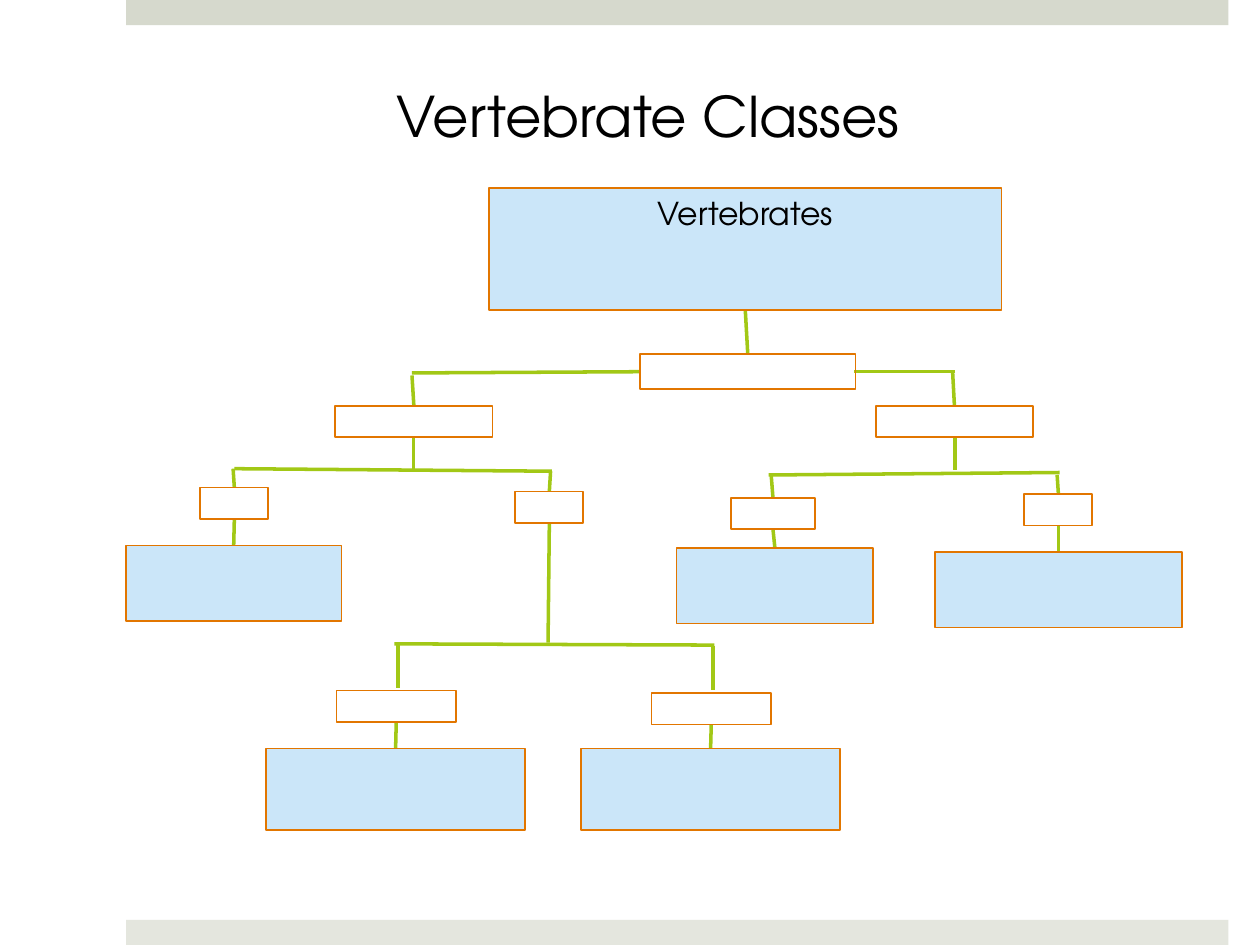
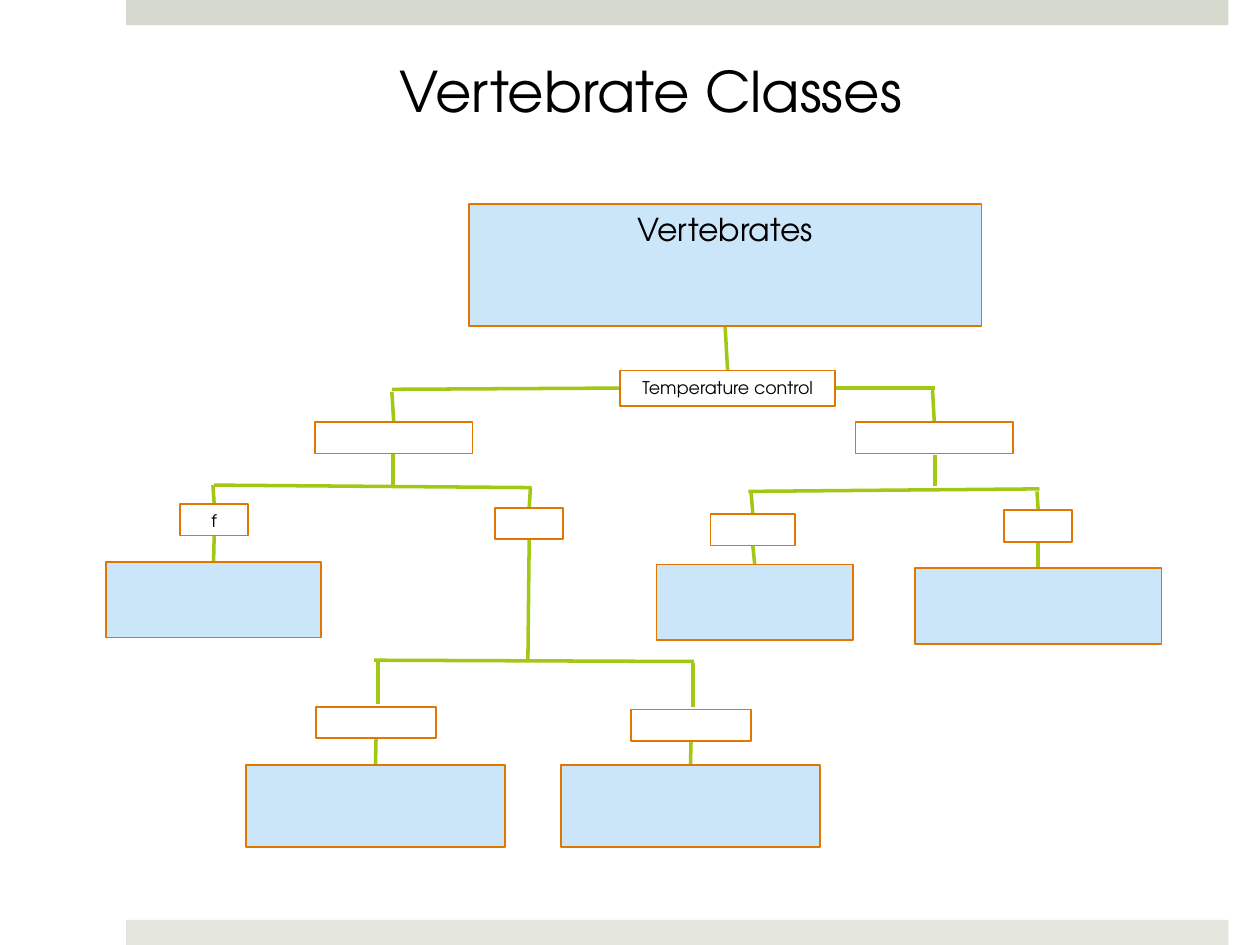
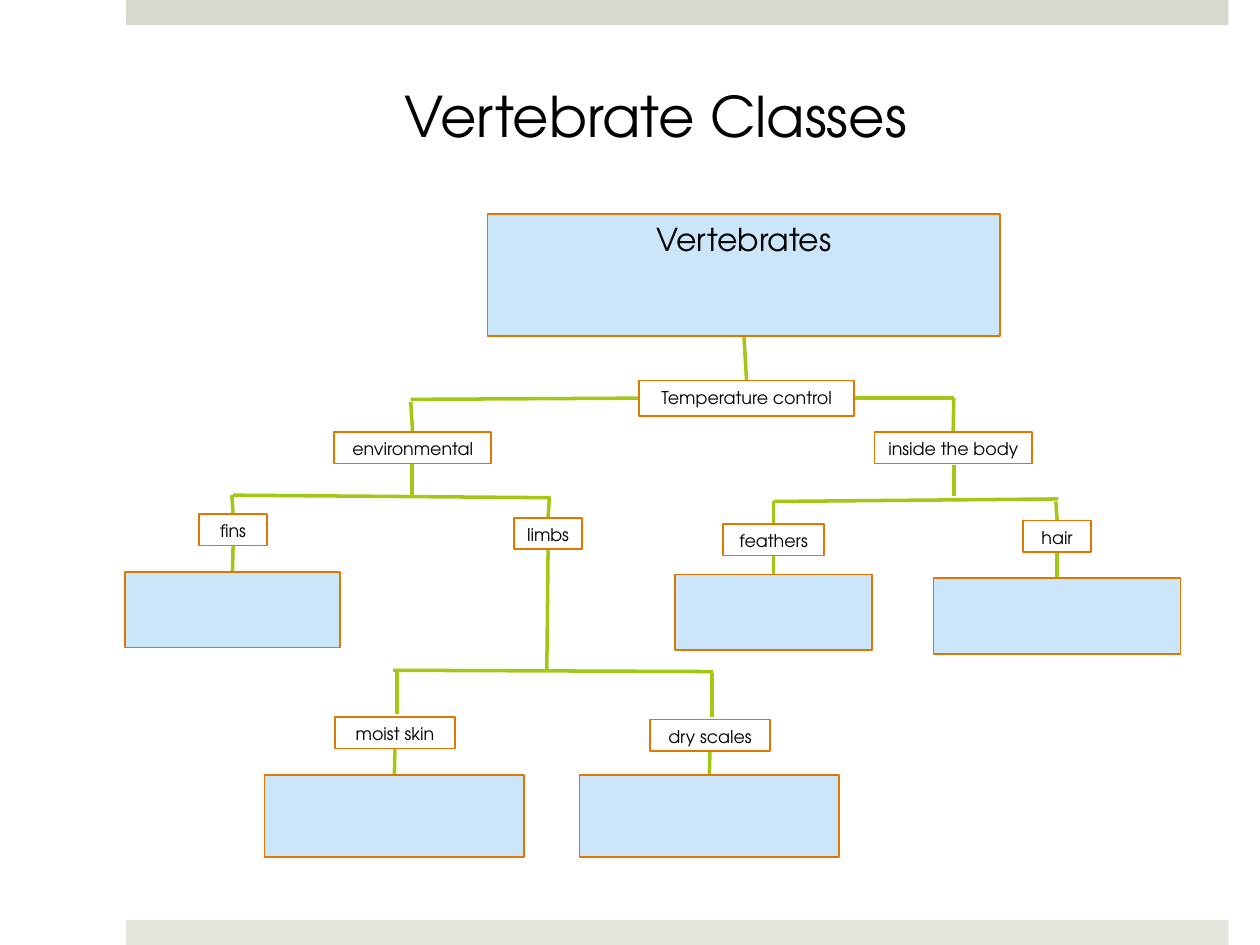
from lxml import etree
from pptx import Presentation
from pptx.dml.color import RGBColor
from pptx.enum.shapes import MSO_CONNECTOR, MSO_SHAPE
from pptx.enum.text import MSO_ANCHOR, MSO_AUTO_SIZE, PP_ALIGN
from pptx.oxml.ns import qn
from pptx.util import Inches, Pt

RECTANGLE = MSO_SHAPE.RECTANGLE
STRAIGHT = MSO_CONNECTOR.STRAIGHT
TOP = MSO_ANCHOR.TOP
FIT_SHAPE = MSO_AUTO_SIZE.SHAPE_TO_FIT_TEXT
CENTER = PP_ALIGN.CENTER
LEFT = PP_ALIGN.LEFT

FONT = "TeX Gyre Adventor"
COLORS = {
    "text": "000000",
    "top band": "D6D9CD",
    "bottom band": "E4E6DE",
    "group": "CBE6F9",
    "outline": "E27600",
    "branch": "A2C816",
}

GROUPS = {
    "vertebrates": (3.88, 1.49, 4.07, 0.97),
    "fish": (1, 4.33, 1.71, 0.6),
    "amphibians": (2.11, 5.94, 2.06, 0.65),
    "reptiles": (4.61, 5.94, 2.06, 0.65),
    "birds": (5.37, 4.35, 1.56, 0.6),
    "mammals": (7.42, 4.38, 1.96, 0.6),
}
TRAITS = {
    "control": (5.08, 2.81, 1.71, 0.28),
    "environmental": (2.66, 3.22, 1.25, 0.25),
    "inside": (6.95, 3.22, 1.25, 0.25),
    "fins": (1.59, 3.87, 0.54, 0.25),
    "limbs": (4.09, 3.9, 0.54, 0.25),
    "feathers": (5.8, 3.95, 0.67, 0.25),
    "hair": (8.13, 3.92, 0.54, 0.25),
    "moist": (2.67, 5.48, 0.95, 0.25),
    "scales": (5.17, 5.5, 0.95, 0.25),
}
LINKS = [
    ("vertebrates", "control"),
    ("fins", "fish"),
    ("moist", "amphibians"),
    ("scales", "reptiles"),
    ("feathers", "birds"),
    ("hair", "mammals"),
]
DROPS = {
    "environmental": (3.27, 2.98),
    "inside": (7.56, 2.94),
    "fins": (1.85, 3.72),
    "limbs": (4.37, 3.74),
    "feathers": (6.12, 3.76),
    "hair": (8.39, 3.77),
}
BRANCHES = {
    "control left": (5.08, 2.95, 3.27, 2.96),
    "control right": (7.58, 2.95, 6.78, 2.95),
    "environmental stem": (3.28, 3.47, 3.28, 3.72),
    "environmental bar": (4.38, 3.74, 1.86, 3.72),
    "inside stem": (7.58, 3.48, 7.58, 3.73),
    "inside bar": (8.41, 3.75, 6.1, 3.77),
    "limbs stem": (4.36, 4.15, 4.35, 5.1),
    "limbs bar": (5.67, 5.12, 3.13, 5.11),
    "moist drop": (3.16, 5.11, 3.16, 5.46),
    "scales drop": (5.66, 5.13, 5.66, 5.48),
}

WIDE_TRAITS = TRAITS | {"feathers": (5.75, 3.95, 0.8, 0.25)}
WIDE_DROPS = DROPS | {"feathers": (6.15, 3.77), "inside": (7.58, 2.95)}
WIDE_BRANCHES = BRANCHES | {"inside bar": (8.41, 3.75, 6.15, 3.77)}

TREE = (TRAITS, DROPS, BRANCHES)
WIDE_TREE = (WIDE_TRAITS, WIDE_DROPS, WIDE_BRANCHES)

ALL_TRAIT_NAMES = {
    "control": "Temperature control",
    "environmental": "environmental",
    "inside": "inside the body",
    "fins": "fins",
    "limbs": "limbs",
    "feathers": "feathers",
    "hair": "hair",
    "moist": "moist skin",
    "scales": "dry scales",
}
SLIDES = [
    ((3.05, 0.6), (0, 0), TREE, {}),
    ((3.07, 0.4), (-0.16, 0.13), TREE,
     {"control": "Temperature control", "fins": "f"}),
    ((3.11, 0.6), (-0.01, 0.21), WIDE_TREE, ALL_TRAIT_NAMES),
]


def color(name):
    return RGBColor.from_string(COLORS[name])


class Deck:
    def __init__(self):
        self.prs = Presentation()
        self.prs.slide_width = Inches(10)
        self.prs.slide_height = Inches(7.5)
        self.slide = None
        self.dx = self.dy = 0

    def new_slide(self):
        self.slide = self.prs.slides.add_slide(self.prs.slide_layouts[6])
        self.dx = self.dy = 0
        self.box((1, 0, 8.75, 0.2), fill="top band")
        self.box((1, 7.3, 8.75, 0.2), fill="bottom band")

    def shift(self, dx, dy):
        self.dx, self.dy = dx, dy

    def label(self, frame, text, size, align):
        frame.word_wrap = False
        frame.vertical_anchor = TOP
        paragraph = frame.paragraphs[0]
        paragraph.text = text
        paragraph.alignment = align
        paragraph.font.name = FONT
        paragraph.font.size = Pt(size)
        paragraph.font.color.rgb = color("text")

    def box(self, area, fill=None, line=None, text="", size=10):
        left, top, width, height = area
        shape = self.slide.shapes.add_shape(
            RECTANGLE, Inches(left + self.dx), Inches(top + self.dy),
            Inches(width), Inches(height))
        shape.shadow.inherit = False
        if fill:
            shape.fill.solid()
            shape.fill.fore_color.rgb = color(fill)
        else:
            shape.fill.background()
        if line:
            shape.line.color.rgb = color(line)
            shape.line.width = Pt(1)
        else:
            shape.line.fill.background()
        if text:
            self.label(shape.text_frame, text, size, CENTER)

    def branch(self, x1, y1, x2, y2):
        connector = self.slide.shapes.add_connector(
            STRAIGHT, Inches(x1 + self.dx), Inches(y1 + self.dy),
            Inches(x2 + self.dx), Inches(y2 + self.dy))
        connector.line.color.rgb = color("branch")
        connector.line.width = Pt(2)
        etree.SubElement(connector._element.spPr, qn("a:effectLst"))

    def title(self, left, top, text):
        box = self.slide.shapes.add_textbox(
            Inches(left), Inches(top), Inches(4.23), Inches(0.64))
        self.label(box.text_frame, text, 32, LEFT)
        box.text_frame.auto_size = FIT_SHAPE

    def tree(self, traits, drops, branches, names):
        areas = GROUPS | traits
        for parent, child in LINKS:
            left, top, width, height = areas[parent]
            child_left, child_top, child_width, _ = areas[child]
            self.branch(left + width / 2, top + height,
                        child_left + child_width / 2, child_top)
        for child, (x, y) in drops.items():
            left, top, width, _ = areas[child]
            self.branch(x, y, left + width / 2, top)
        for ends in branches.values():
            self.branch(*ends)
        for group, area in GROUPS.items():
            name = "Vertebrates" if group == "vertebrates" else ""
            self.box(area, "group", "outline", name, 18)
        for trait, area in traits.items():
            self.box(area, None, "outline", names.get(trait, ""))


def main():
    deck = Deck()
    for title_at, offset, tree, names in SLIDES:
        deck.new_slide()
        deck.title(*title_at, "Vertebrate Classes")
        deck.shift(*offset)
        deck.tree(*tree, names)
    deck.prs.save("out.pptx")


if __name__ == "__main__":
    main()
